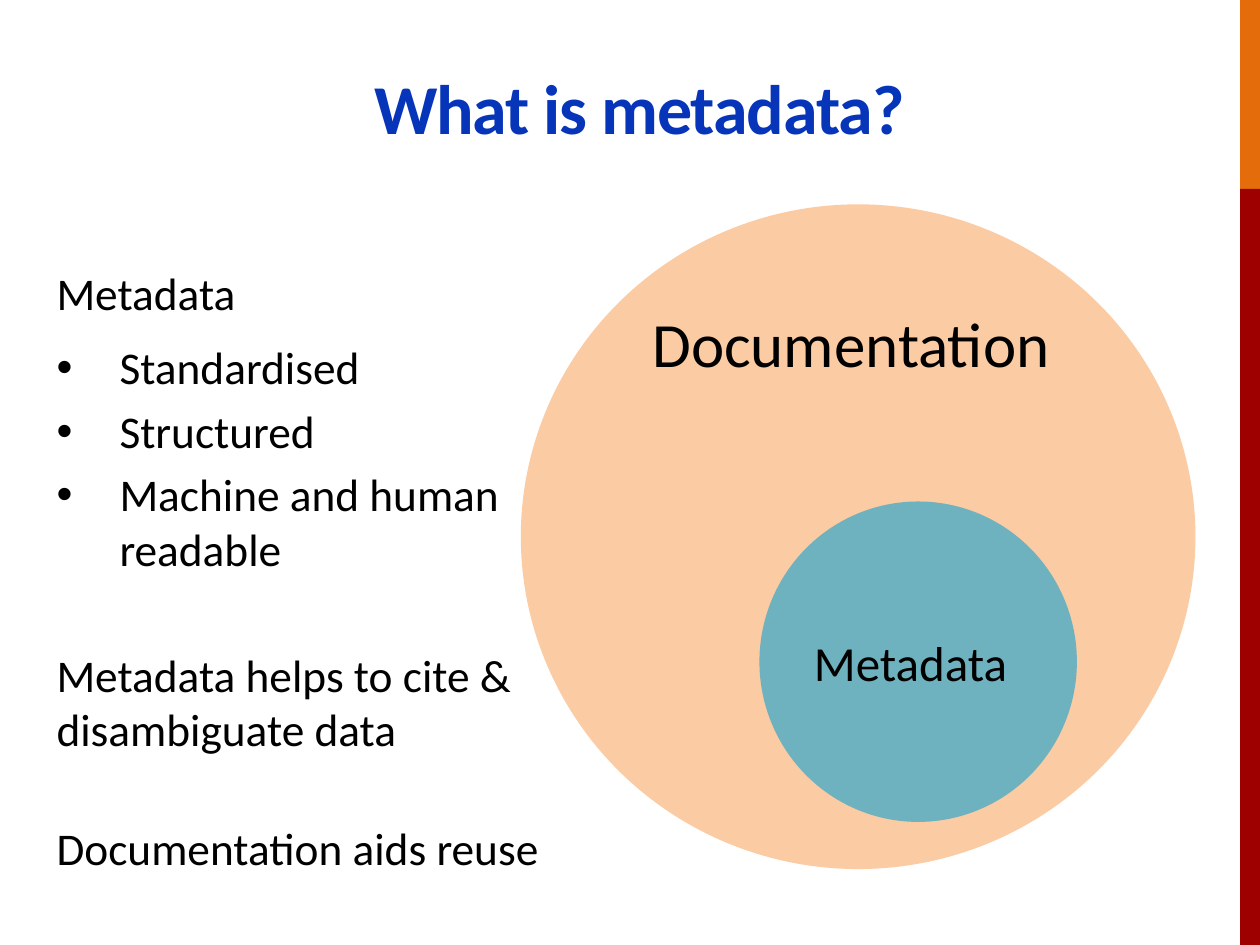
from lxml.etree import SubElement as Sub
from pptx import Presentation as Deck
from pptx.dml.color import RGBColor as Rgb
from pptx.enum.shapes import MSO_SHAPE as Geo
from pptx.enum.text import MSO_ANCHOR as Anchor, PP_ALIGN as Align
from pptx.oxml.ns import qn
from pptx.util import Cm, Pt

BODY = 25.9
ITEM = {"space_before": Pt(5.2)}
HEAD = ITEM | {"space_after": Pt(6)}
NOTES = [
    ("Metadata", HEAD, False),
    ("Standardised", ITEM, True),
    ("Structured", ITEM, True),
    ("Machine and human readable", ITEM, True),
    ("Metadata helps to cite & disambiguate data", HEAD | {"space_before": Pt(41)}, False),
    ("Documentation aids reuse", HEAD | {"space_before": Pt(30.5)}, False),
]


def tint(fmt, code):
    fmt.rgb = Rgb.from_string(code)


def apply(obj, vals):
    for key, val in vals.items():
        setattr(obj, key, val)


def block(slide, geo, box, code, alpha=None):
    shape = slide.shapes.add_shape(geo, *map(Cm, box))
    shape.shadow.inherit = False
    shape.line.fill.background()
    shape.fill.solid()
    tint(shape.fill.fore_color, code)
    if alpha:
        color = shape.fill._xPr.find(qn("a:solidFill"))[0]
        Sub(color, qn("a:alpha"), val=str(alpha * 1000))


def frame(slide, box, **vals):
    text = slide.shapes.add_textbox(*map(Cm, box)).text_frame
    apply(text, {"word_wrap": True} | vals)
    return text


def write(para, words, size, code="000000", bold=False):
    run = para.add_run()
    run.text = words
    apply(run.font, {"name": "Calibri", "size": Pt(size), "bold": bold})
    tint(run.font.color, code)
    return run


def bullet(para):
    props = para._p.get_or_add_pPr()
    props.set("marL", str(Cm(1.27)))
    props.set("indent", str(-Cm(1.27)))
    Sub(props, qn("a:buFont"), typeface="Arial")
    Sub(props, qn("a:buChar"), char="•")


def title(slide, words):
    para = frame(slide, (1.27, 1.22, 23.24, 1.9), vertical_anchor=Anchor.BOTTOM).paragraphs[0]
    para.alignment = Align.CENTER
    run = write(para, words, 40, "0635BA", True)
    run.font._element.set("spc", "-60")


def notes(slide):
    text = frame(slide, (0.89, 5.23, 11, 13.28))
    for num, (words, vals, dot) in enumerate(NOTES):
        para = text.add_paragraph() if num else text.paragraphs[0]
        apply(para, vals)
        if dot:
            bullet(para)
        write(para, words, BODY)


def label(slide, words, box, size):
    write(frame(slide, box, word_wrap=False).paragraphs[0], words, size)


def main():
    deck = Deck()
    apply(deck, {"slide_width": Cm(25.4), "slide_height": Cm(19.05)})
    slide = deck.slides.add_slide(deck.slide_layouts[6])
    block(slide, Geo.RECTANGLE, (25, 0, 0.4, 3.81), "E46C0A")
    block(slide, Geo.RECTANGLE, (25, 3.81, 0.4, 15.24), "9E0000")
    title(slide, "What is metadata?")
    notes(slide)
    block(slide, Geo.OVAL, (10.5, 4.12, 13.6, 13.4), "F79646", 49)
    block(slide, Geo.OVAL, (15.31, 10.11, 6.4, 6.46), "4BACC6", 80)
    label(slide, "Metadata", (16.16, 12.63, 4.7, 1.45), 28)
    label(slide, "Documentation", (12.9, 6.02, 8.8, 1.8), 36)
    deck.save("out.pptx")


if __name__ == "__main__":
    main()
